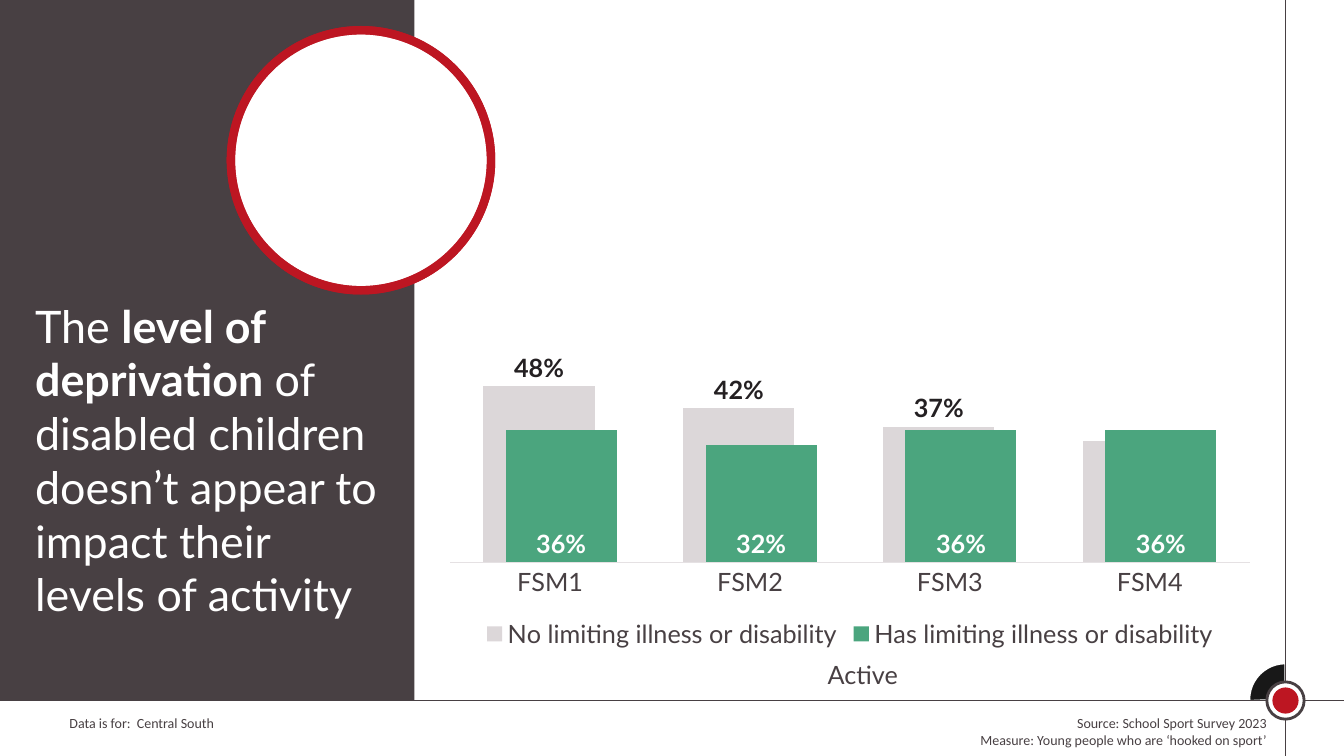
from pptx import Presentation
from pptx.chart.data import CategoryChartData
from pptx.dml.color import RGBColor
from pptx.enum.chart import XL_CHART_TYPE, XL_LABEL_POSITION, XL_LEGEND_POSITION, XL_TICK_MARK
from pptx.enum.shapes import MSO_CONNECTOR, MSO_SHAPE
from pptx.enum.text import MSO_AUTO_SIZE, PP_ALIGN
from pptx.oxml import parse_xml
from pptx.oxml.ns import qn
from pptx.util import Inches, Pt

COLUMNS = XL_CHART_TYPE.COLUMN_CLUSTERED
OUTSIDE, BASE = XL_LABEL_POSITION.OUTSIDE_END, XL_LABEL_POSITION.INSIDE_BASE
BOTTOM, NO_TICK = XL_LEGEND_POSITION.BOTTOM, XL_TICK_MARK.NONE
STRAIGHT = MSO_CONNECTOR.STRAIGHT
RECT, OVAL, PIE = MSO_SHAPE.RECTANGLE, MSO_SHAPE.OVAL, MSO_SHAPE.PIE
GROW = MSO_AUTO_SIZE.SHAPE_TO_FIT_TEXT
LEFT, RIGHT = PP_ALIGN.LEFT, PP_ALIGN.RIGHT


class Theme:
    dark = RGBColor.from_string("484043")
    black = RGBColor.from_string("181818")
    label = RGBColor.from_string("242022")
    white = RGBColor.from_string("FFFFFF")
    red = RGBColor.from_string("BD1622")
    grey = RGBColor.from_string("DCD7D9")
    green = RGBColor.from_string("4BA57E")
    axis = RGBColor.from_string("E5E1E3")
    font, note_font = "Lato", "Calibri"
    headline, body, note = Pt(32), Pt(18), Pt(10)


# Page grid: the rail and the floor cross at the hub
W, H = 13.33, 7.5
RAIL, FLOOR = 12.75, 6.95
PANEL = 4.11
NOTE_TOP = 7.04

prs = Presentation()
prs.slide_width, prs.slide_height = Inches(W), Inches(H)
s = prs.slides.add_slide(prs.slide_layouts[6])


def add_text(paragraphs, x, y, w, h, size=Theme.body, font=Theme.font,
             color=Theme.dark, align=LEFT):
    """Each paragraph is a list of (text, bold) runs."""
    tf = s.shapes.add_textbox(Inches(x), Inches(y), Inches(w), Inches(h)).text_frame
    tf.word_wrap = True
    tf.auto_size = GROW
    for i, runs in enumerate(paragraphs):
        p = tf.add_paragraph() if i else tf.paragraphs[0]
        p.alignment = align
        for text, bold in runs:
            r = p.add_run()
            r.text = text
            r.font.size, r.font.name, r.font.bold = size, font, bold
            r.font.color.rgb = color


def add_centred(kind, cx, cy, w, h, fill, line=None, width=0):
    sp = s.shapes.add_shape(kind, Inches(cx - w / 2), Inches(cy - h / 2), Inches(w), Inches(h))
    sp.shadow.inherit = False
    sp.fill.solid()
    sp.fill.fore_color.rgb = fill
    if line is None:
        sp.line.fill.background()
    else:
        sp.line.color.rgb = line
        sp.line.width = Pt(width)
    return sp


# Footer note, left
add_text([[("Data is for:  Central South", False)]], 0.59, NOTE_TOP, 4.39, 0.27,
         size=Theme.note, font=Theme.note_font)

# Quarter disc, rail and floor lines, hub
quarter = add_centred(PIE, RAIL, FLOOR - 0.01, 0.72, 0.72, Theme.black, Theme.white, 1.5)
quarter.adjustments[0], quarter.adjustments[1] = 106.62, 162
for x1, y1, x2, y2 in ((RAIL, 0, RAIL, H), (0, FLOOR, W, FLOOR)):
    line = s.shapes.add_connector(STRAIGHT, Inches(x1), Inches(y1), Inches(x2), Inches(y2))
    line.line.color.rgb = Theme.dark
    line.line.width = Pt(1)
    line._element.spPr.append(parse_xml(
        '<a:effectLst xmlns:a="http://schemas.openxmlformats.org/drawingml/2006/main"/>'))
add_centred(OVAL, RAIL, FLOOR, 0.37, 0.37, Theme.white, Theme.dark, 2)
add_centred(OVAL, RAIL, FLOOR, 0.26, 0.26, Theme.red)

# Dark panel with the ring over its edge
add_centred(RECT, PANEL / 2, FLOOR / 2, PANEL, FLOOR, Theme.dark)
for opacity in (100, 20):
    ring = add_centred(OVAL, 3.58, 1.59, 2.58, 2.58, Theme.white, Theme.red, 6)
    if opacity < 100:
        rgb = ring._element.spPr.find(qn("a:solidFill"))[0]
        alpha = rgb.makeelement(qn("a:alpha"), {"val": str(opacity * 1000)})
        rgb.append(alpha)

# Footer note, right
add_text([[("Source: School Sport Survey 2023", False)],
          [("Measure: Young people who are ‘hooked on sport’", False)]],
         6.19, NOTE_TOP, 6.47, 0.44, size=Theme.note, font=Theme.note_font, align=RIGHT)

# Headline and chart caption
add_text([[("The ", False), ("level of deprivation ", True),
           ("of disabled children doesn’t appear to impact their levels of activity", False)]],
         0.25, 2.91, 3.69, 3.87, size=Theme.headline, color=Theme.white)
add_text([[("Active", False)]], 8.11, 6.49, 1.22, 0.4)

# Activity chart
data = CategoryChartData(number_format="0%")
data.categories = ["FSM1", "FSM2", "FSM3", "FSM4"]
data.add_series("No limiting illness or disability", (0.48, 0.42, 0.37, 0.33))
data.add_series("Has limiting illness or disability", (0.36, 0.32, 0.36, 0.36))
chart = s.shapes.add_chart(COLUMNS, Inches(4.3), Inches(1.85), Inches(8.26), Inches(4.64),
                           data).chart
chart.has_title = False
chart.has_legend = True
chart.legend.position = BOTTOM
chart.legend.include_in_layout = False

cat_axis, val_axis = chart.category_axis, chart.value_axis
cat_axis.major_tick_mark = cat_axis.minor_tick_mark = NO_TICK
cat_axis.format.line.color.rgb = Theme.axis
cat_axis.format.line.width = Pt(0.75)
val_axis.minimum_scale, val_axis.maximum_scale = 0, 1
val_axis.has_major_gridlines = False
val_axis.visible = False

for f, name in ((chart.font, Theme.note_font), (chart.legend.font, Theme.font),
                (cat_axis.tick_labels.font, Theme.font)):
    f.size, f.name = Theme.body, name
    f.color.rgb = Theme.dark

plot = chart.plots[0]
plot.gap_width, plot.overlap = 60, 80
plot.vary_by_categories = False
styles = ((Theme.grey, Theme.label, OUTSIDE), (Theme.green, Theme.white, BASE))
for series, (fill, ink, position) in zip(plot.series, styles):
    series.format.fill.solid()
    series.format.fill.fore_color.rgb = fill
    labels = series.data_labels
    labels.show_value = True
    labels.position = position
    labels.number_format, labels.number_format_is_linked = "0%", False
    labels.font.size, labels.font.name, labels.font.bold = Theme.body, Theme.font, True
    labels.font.color.rgb = ink

# The last grey bar carries no label
plot.series[0].data_labels._element.insert(0, parse_xml(
    '<c:dLbl xmlns:c="http://schemas.openxmlformats.org/drawingml/2006/chart">'
    '<c:idx val="3"/><c:delete val="1"/></c:dLbl>'))

prs.save("out.pptx")
